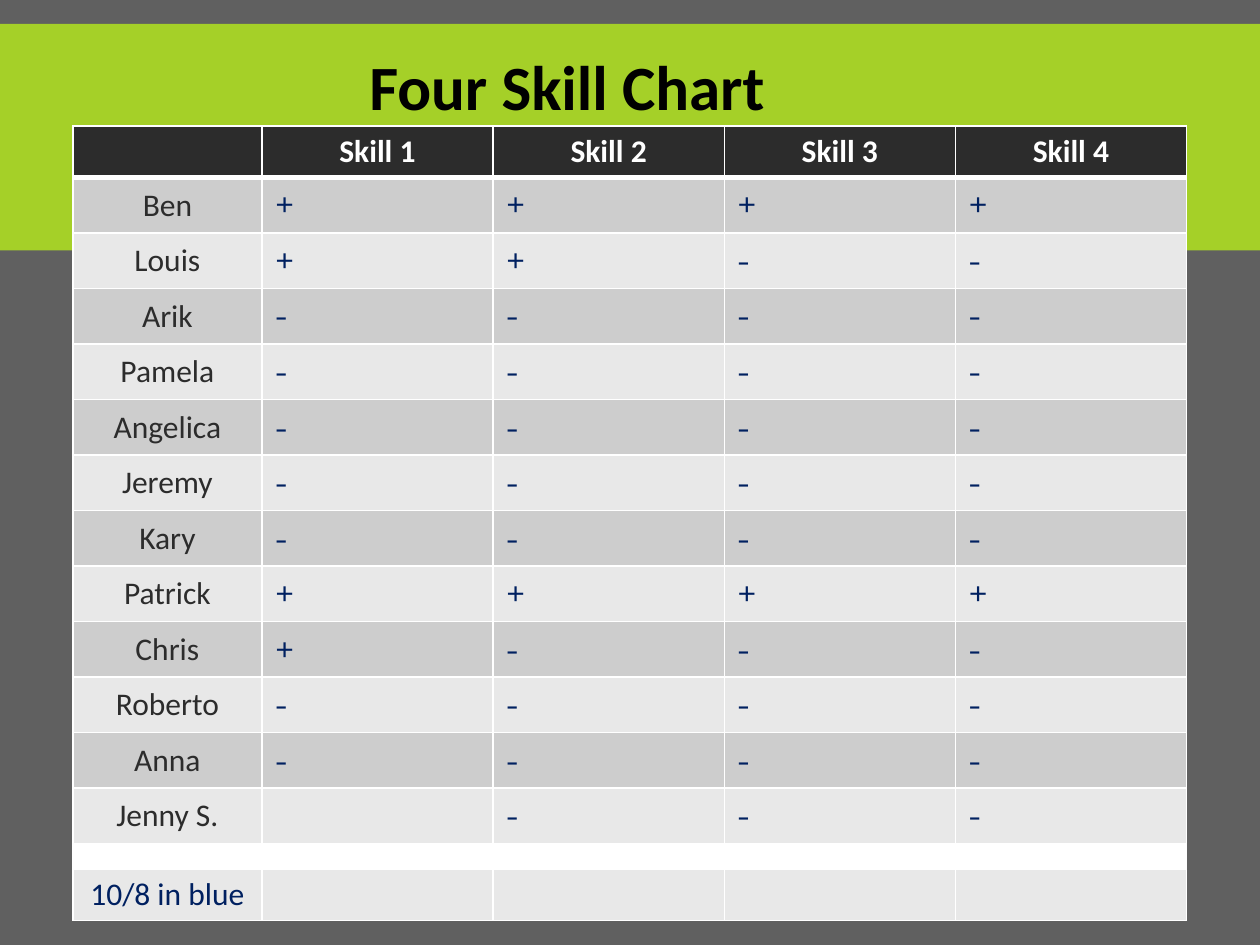
"""Build the Four Skill Chart slide."""
import dataclasses

import lxml.etree
import pptx
import pptx.dml.color
import pptx.enum.shapes
import pptx.enum.text
import pptx.oxml.ns
import pptx.util

Cm = pptx.util.Cm
Pt = pptx.util.Pt
CENTER = pptx.enum.text.PP_ALIGN.CENTER
LEFT = pptx.enum.text.PP_ALIGN.LEFT
WHITE, BLACK, DARK, BLUE = "FFFFFF", "000000", "2C2C2C", "002060"
GREY, LIGHT_GREY = "CDCDCD", "E8E8E8"
GREEN, BACKDROP = "A5D028", "606060"
COLUMN_WIDTHS = (3.81, 4.66, 4.66, 4.66, 4.66)


@dataclasses.dataclass(frozen=True)
class TextStyle:
    """Font and alignment of a piece of text."""
    size: float
    font: str
    color: str
    bold: bool = False
    align: pptx.enum.text.PP_ALIGN = CENTER


@dataclasses.dataclass(frozen=True)
class Student:
    """A name and one mark per skill, a space where none is given."""
    name: str
    marks: str


@dataclasses.dataclass(frozen=True)
class ChartRow:
    """The texts and look of one table row."""
    texts: tuple[str, ...]
    height: float
    fill: str
    label_style: TextStyle
    value_style: TextStyle
    top_border: float = 1
    bottom_border: float = 1


TITLE = TextStyle(36, "Calibri", BLACK, True, LEFT)
HEADER = TextStyle(18, "Calibri", WHITE, True)
NAME = TextStyle(18, "Calibri", DARK)
NOTE = TextStyle(18, "Calibri", BLUE)
MARK = TextStyle(20, "Montserrat", BLUE, align=LEFT)
SPACER = TextStyle(5, "Calibri", DARK)

STUDENTS = (
    Student("Ben", "++++"),
    Student("Louis", "++--"),
    Student("Arik", "----"),
    Student("Pamela", "----"),
    Student("Angelica", "----"),
    Student("Jeremy", "----"),
    Student("Kary", "----"),
    Student("Patrick", "++++"),
    Student("Chris", "+---"),
    Student("Roberto", "----"),
    Student("Anna", "----"),
    Student("Jenny S.", " ---"),
)


def rgb(color: str) -> pptx.dml.color.RGBColor:
    """Turn a hex string into a colour."""
    return pptx.dml.color.RGBColor.from_string(color)


def write_text(text_frame, text: str, style: TextStyle) -> None:
    """Write one styled paragraph."""
    text_frame.text = text
    paragraph = text_frame.paragraphs[0]
    paragraph.alignment = style.align
    for run in paragraph.runs:
        run.font.size = Pt(style.size)
        run.font.name = style.font
        run.font.bold = style.bold
        run.font.color.rgb = rgb(style.color)


def set_empty_size(cell, size: float) -> None:
    """Set the text size that an empty cell reserves."""
    paragraph = cell.text_frame.paragraphs[0]._p
    end = lxml.etree.SubElement(paragraph, pptx.oxml.ns.qn("a:endParaRPr"))
    end.set("sz", str(int(size * 100)))


def add_border(cell, side: str, width: float) -> None:
    """Draw a white line on one side of a cell."""
    properties = cell._tc.get_or_add_tcPr()
    line = lxml.etree.SubElement(properties, pptx.oxml.ns.qn(f"a:ln{side}"), w=str(Pt(width)))
    fill = lxml.etree.SubElement(line, pptx.oxml.ns.qn("a:solidFill"))
    lxml.etree.SubElement(fill, pptx.oxml.ns.qn("a:srgbClr"), val=WHITE)


def chart_rows() -> list[ChartRow]:
    """List the table rows from header to note."""
    blanks = ("",) * 4
    skills = tuple(f"Skill {number}" for number in range(1, 5))
    rows = [ChartRow(("", *skills), 1.04, DARK, HEADER, HEADER, bottom_border=3)]
    for index, student in enumerate(STUDENTS):
        texts = (student.name, *(mark.strip() for mark in student.marks))
        fill = LIGHT_GREY if index % 2 else GREY
        rows.append(ChartRow(texts, 1.09, fill, NAME, MARK, top_border=1 if index else 3))
    rows.append(ChartRow(("", *blanks), 0.51, WHITE, SPACER, SPACER))
    rows.append(ChartRow(("10/8 in blue", *blanks), 1.04, LIGHT_GREY, NOTE, NOTE))
    return rows


def fill_row(table, index: int, row: ChartRow) -> None:
    """Write and format one table row."""
    table.rows[index].height = Cm(row.height)
    borders = {"L": 1, "R": 1, "T": row.top_border, "B": row.bottom_border}
    for column, text in enumerate(row.texts):
        cell = table.cell(index, column)
        style = row.value_style if column else row.label_style
        write_text(cell.text_frame, text, style)
        if not text:
            set_empty_size(cell, min(style.size, 18))
        cell.vertical_anchor = pptx.enum.text.MSO_ANCHOR.MIDDLE
        for side, width in borders.items():
            add_border(cell, side, width)
        cell.fill.solid()
        cell.fill.fore_color.rgb = rgb(row.fill)


def add_band(slide):
    """Add the green band behind the title."""
    band = slide.shapes.add_shape(
        pptx.enum.shapes.MSO_SHAPE.RECTANGLE, 0, Cm(0.48), Cm(25.4), Cm(4.57))
    band.shadow.inherit = False
    band.fill.solid()
    band.fill.fore_color.rgb = rgb(GREEN)
    band.line.fill.background()


def add_skill_table(slide):
    """Add the table of students and skills."""
    rows = chart_rows()
    frame = slide.shapes.add_table(
        len(rows), len(COLUMN_WIDTHS), Cm(1.47), Cm(2.54),
        Cm(sum(COLUMN_WIDTHS)), Cm(sum(row.height for row in rows)))
    table = frame.table
    table.first_row = False
    table.horz_banding = False
    for column, width in zip(table.columns, COLUMN_WIDTHS):
        column.width = Cm(width)
    for index, row in enumerate(rows):
        fill_row(table, index, row)
    return frame


def place_title(slide, frame) -> None:
    """Write the title and bring it in front of the table."""
    title = slide.shapes.title
    title.left, title.top, title.width, title.height = Cm(7.19), Cm(0.84), Cm(11.23), Cm(1.8)
    write_text(title.text_frame, "Four Skill Chart", TITLE)
    title.text_frame.word_wrap = True
    title.text_frame.auto_size = pptx.enum.text.MSO_AUTO_SIZE.SHAPE_TO_FIT_TEXT
    title.text_frame.vertical_anchor = pptx.enum.text.MSO_ANCHOR.TOP
    frame.element.addnext(title.element)


def main() -> None:
    """Build and save the presentation."""
    presentation = pptx.Presentation()
    presentation.slide_width, presentation.slide_height = Cm(25.4), Cm(19.05)
    slide = presentation.slides.add_slide(presentation.slide_layouts[5])
    slide.background.fill.solid()
    slide.background.fill.fore_color.rgb = rgb(BACKDROP)
    add_band(slide)
    frame = add_skill_table(slide)
    place_title(slide, frame)
    presentation.save("out.pptx")


if __name__ == "__main__":
    main()
